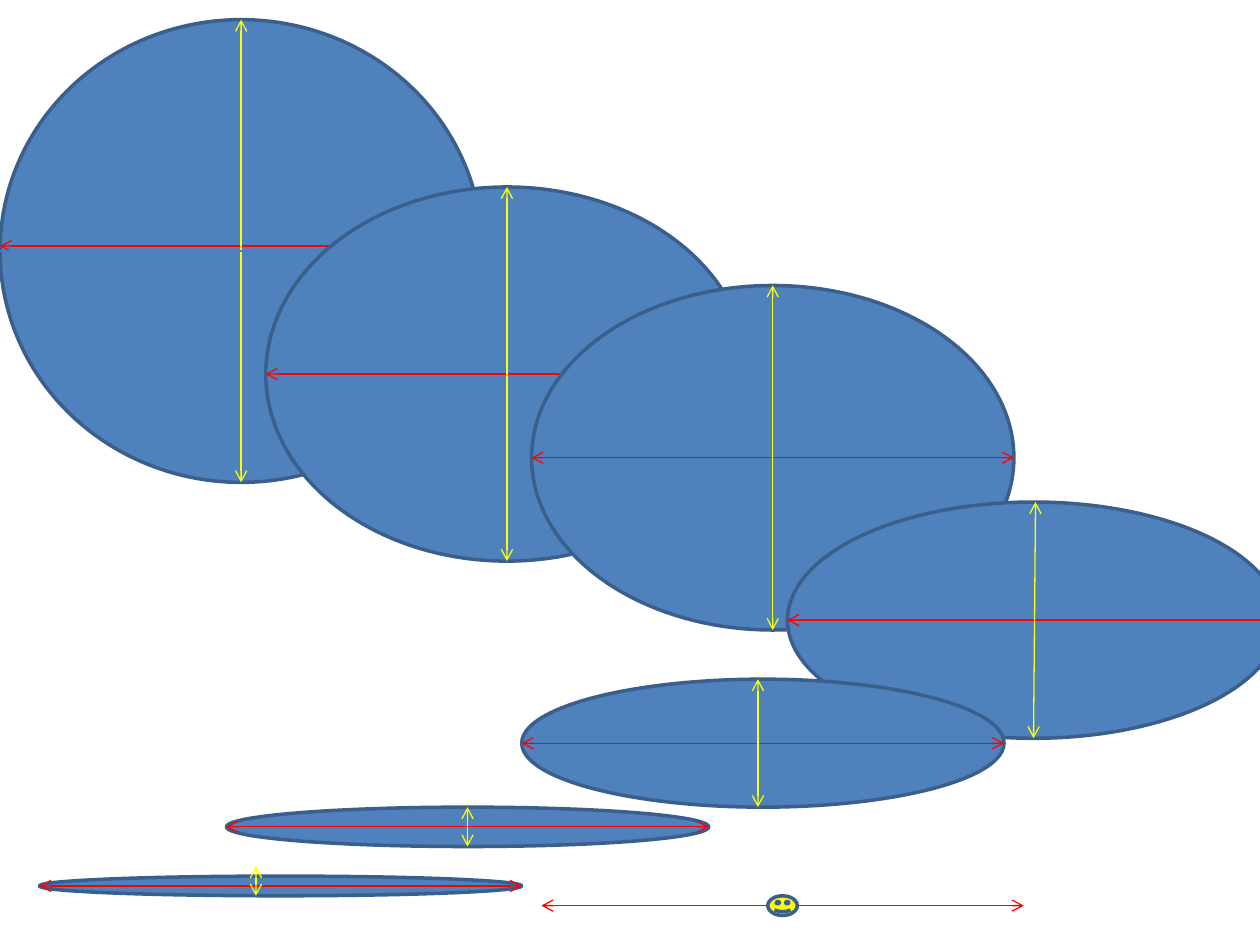
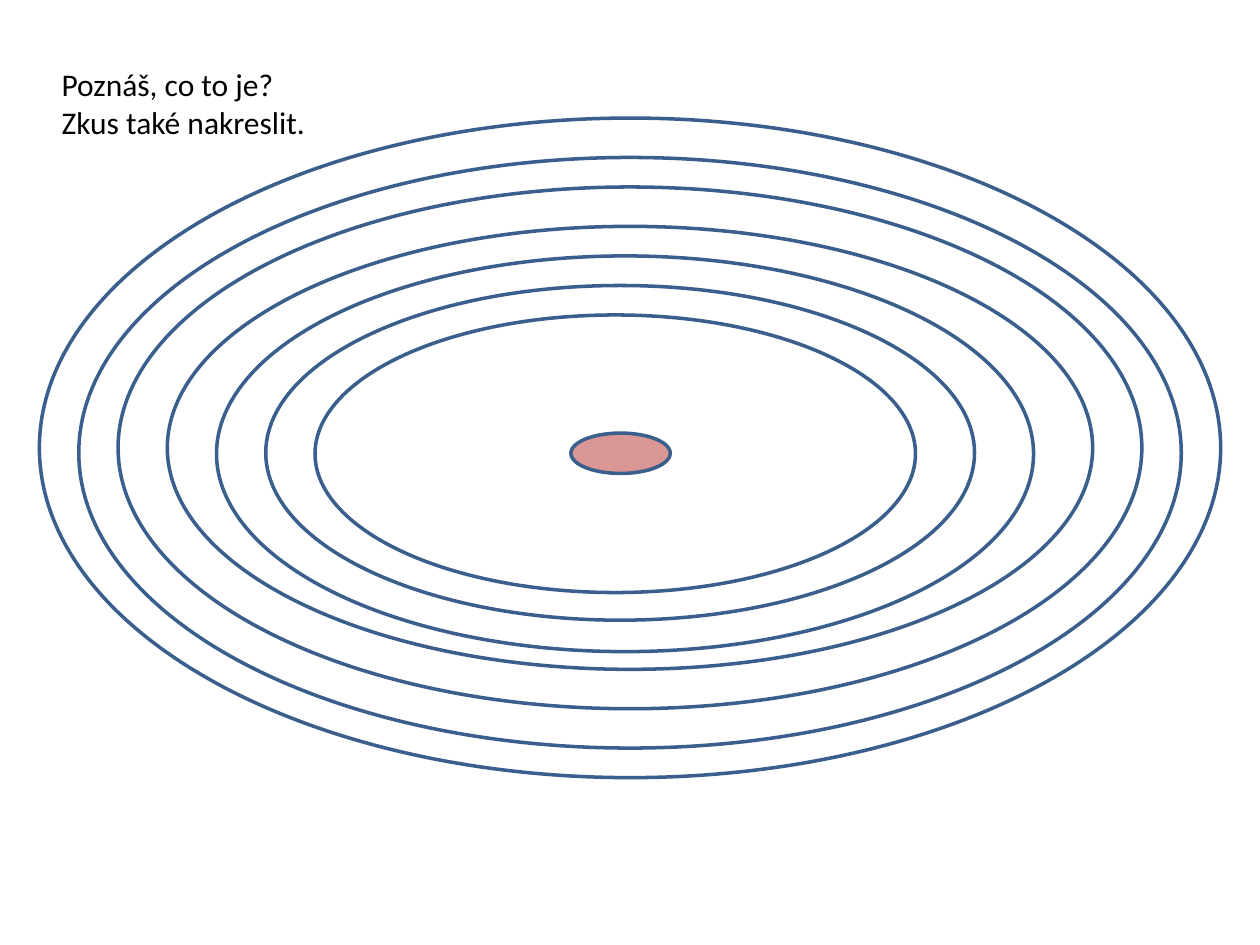
from lxml import etree
from pptx import Presentation
from pptx import util as u
from pptx.dml.color import RGBColor
from pptx.enum import shapes, text
from pptx.oxml import ns

BLUE = RGBColor(0x4F, 0x81, 0xBD)
OUTLINE = RGBColor(0x3A, 0x5F, 0x8C)
CHORD = RGBColor(0x4B, 0x7E, 0xBC)
RED = RGBColor(0xFF, 0x00, 0x00)
YELLOW = RGBColor(0xFF, 0xFF, 0x00)
PINK = RGBColor(0xD9, 0x96, 0x94)
BLACK = RGBColor(0x00, 0x00, 0x00)

COLUMNS, ROWS = 128, 96
OVAL = shapes.MSO_SHAPE.OVAL
SMILEY = shapes.MSO_SHAPE.SMILEY_FACE


def write(frame, lines, font="Calibri", size=18, color=BLACK):
    for index, line in enumerate(lines):
        paragraph = frame.paragraphs[0] if index == 0 else frame.add_paragraph()
        run = paragraph.add_run()
        run.text = line
        run.font.name = font
        run.font.size = u.Pt(size)
        run.font.color.rgb = color


class Drawing:
    def __init__(self):
        self.deck = Presentation()
        self.deck.slide_width = u.Inches(10)
        self.deck.slide_height = u.Inches(7.5)
        self.slide = None

    def new_slide(self):
        self.slide = self.deck.slides.add_slide(self.deck.slide_layouts[6])

    def grid(self, *cells):
        spans = (self.deck.slide_width / COLUMNS, self.deck.slide_height / ROWS)
        return [u.Emu(round(cell * spans[i % 2])) for i, cell in enumerate(cells)]

    def group(self):
        return self.slide.shapes.add_group_shape()

    def figure(self, kind, box, fill=None, parent=None):
        shape = (parent or self.slide).shapes.add_shape(kind, *self.grid(*box))
        shape.shadow.inherit = False
        if fill is None:
            shape.fill.background()
        else:
            shape.fill.solid()
            shape.fill.fore_color.rgb = fill
        shape.line.color.rgb = OUTLINE
        shape.line.width = u.Pt(2)

    def line(self, ends, color, parent=None, arrows=True):
        connector = (parent or self.slide).shapes.add_connector(
            shapes.MSO_CONNECTOR.STRAIGHT, *self.grid(*ends))
        connector.line.color.rgb = color
        connector.line.width = u.Pt(0.75)
        if arrows:
            stroke = connector.line._get_or_add_ln()
            for end in ("a:headEnd", "a:tailEnd"):
                etree.SubElement(stroke, ns.qn(end), type="arrow")
        etree.SubElement(connector._element.spPr, ns.qn("a:effectLst"))

    def ellipse_with_axes(self, box, width_row=None, height_ends=None):
        left, top, width, height = box
        middle, center = top + height / 2, left + width / 2
        row = width_row or middle
        group = self.group()
        self.figure(OVAL, box, BLUE, group)
        self.line((left, row, left + width, row), RED, group)
        self.line(height_ends or (center, top, center, top + height), YELLOW, group)

    def caption(self, box, lines):
        frame = self.slide.shapes.add_textbox(*self.grid(*box)).text_frame
        frame.word_wrap = True
        frame.auto_size = text.MSO_AUTO_SIZE.SHAPE_TO_FIT_TEXT
        write(frame, lines)


def draw_tilting_ellipses(drawing):
    drawing.new_slide()
    drawing.ellipse_with_axes((0, 2, 49, 47), width_row=25)
    drawing.line((0, 25.5, 49, 25.5), CHORD, arrows=False)
    drawing.ellipse_with_axes((27, 19, 49, 38))
    drawing.ellipse_with_axes((4, 89, 49, 2), height_ends=(26, 88, 26, 91))

    edge_view = drawing.group()
    drawing.line((55, 92, 104, 92), RED, edge_view)
    drawing.figure(SMILEY, (78, 91, 3, 2), YELLOW, edge_view)

    drawing.ellipse_with_axes((54, 29, 49, 35))
    drawing.ellipse_with_axes((80, 51, 50, 24), height_ends=(105.2, 51, 105, 75))
    drawing.ellipse_with_axes((53, 69, 49, 13), height_ends=(77, 69, 77, 82))
    drawing.ellipse_with_axes((23, 82, 49, 4))


def draw_rings(drawing):
    drawing.new_slide()
    rings = [
        (4, 12, 120, 67),
        (8, 16, 112, 60),
        (12, 19, 104, 53),
        (17, 23, 94, 45),
        (22, 26, 83, 40.2),
        (27, 29, 72, 34),
        (32, 32, 61, 28.2),
    ]
    for ring in rings:
        drawing.figure(OVAL, ring)
    drawing.figure(OVAL, (58, 44, 10.1, 4.1), PINK)
    drawing.caption((5, 6, 54, 9), ["Poznáš, co to je?", "Zkus také nakreslit."])


def main():
    drawing = Drawing()
    draw_tilting_ellipses(drawing)
    draw_rings(drawing)
    drawing.deck.save("out.pptx")


if __name__ == "__main__":
    main()
